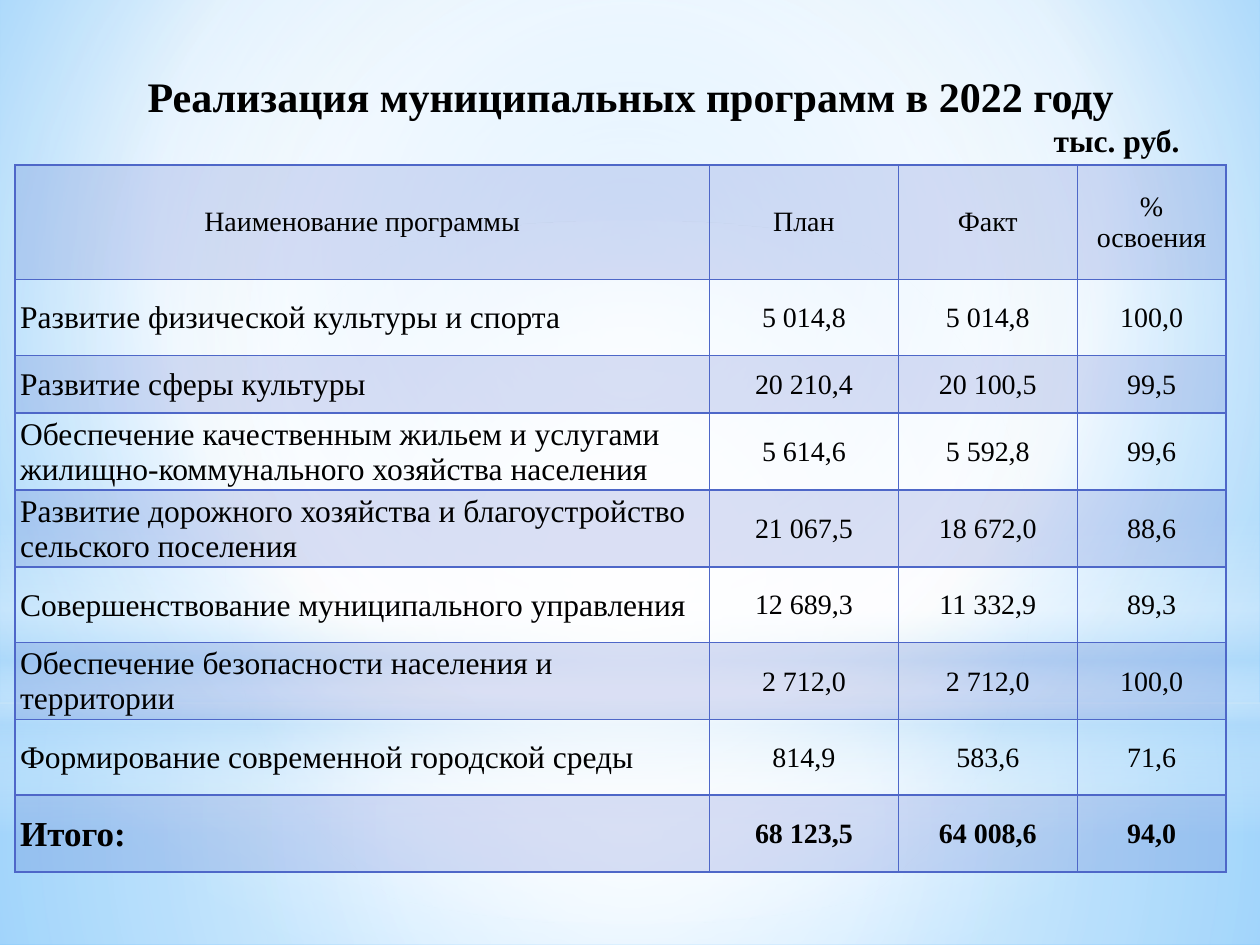
from dataclasses import dataclass
from typing import Optional

import lxml.etree
import pptx
import pptx.dml.color
import pptx.enum.shapes
import pptx.enum.text
import pptx.oxml.ns
import pptx.util

Inches = pptx.util.Inches
Align = pptx.enum.text.PP_ALIGN
Preset = pptx.enum.shapes.MSO_SHAPE
qn = pptx.oxml.ns.qn

FONT = "Times New Roman"
COLORS = {
    "text": "000000",
    "accent": "4E67C8",
    "white": "FFFFFF",
    "haze": "B4DCFA",
    "sky": "9ED5FF",
    "deep": "5BB9FF",
}


@dataclass(frozen=True)
class Stop:
    position: int
    color: str
    opacity: int = 100


@dataclass(frozen=True)
class Gradient:
    stops: tuple[Stop, ...]
    focus: tuple[int, int, int, int] = (50, 50, 50, 50)
    angle: Optional[int] = None


@dataclass(frozen=True)
class Layer:
    preset: int
    top: float
    height: float
    gradient: Gradient


@dataclass(frozen=True)
class Program:
    name: str
    plan: str
    actual: str
    percent: str
    height: float = 0.6


BACKGROUND = Gradient(
    (Stop(0, "sky"), Stop(60, "white"), Stop(100, "deep")), (20, 10, 20, 60))
LAYERS = [
    Layer(Preset.RECTANGLE, 5.58, 1.92, Gradient(
        (Stop(0, "white", 91), Stop(37, "white", 76), Stop(100, "haze", 79)))),
    Layer(Preset.RECTANGLE, 0, 5.58, Gradient(
        (Stop(0, "white", 89), Stop(48, "white", 62), Stop(100, "haze", 79)))),
    Layer(Preset.RECTANGLE, 4.12, 2.5, Gradient(
        (Stop(0, "white", 0), Stop(29, "white", 30), Stop(45, "haze", 40),
         Stop(55, "white", 26), Stop(65, "haze", 60), Stop(100, "white", 0)),
        angle=90)),
    Layer(Preset.OVAL, 1.75, 5.58, Gradient(
        (Stop(0, "white"), Stop(56, "white", 0)))),
]
COLUMN_WIDTHS = [5.51, 1.5, 1.42, 1.18]
ROWS = [
    Program("Наименование программы", "План", "Факт", "% освоения", 0.91),
    Program("Развитие физической культуры и спорта", "5 014,8", "5 014,8", "100,0"),
    Program("Развитие сферы культуры", "20 210,4", "20 100,5", "99,5", 0.46),
    Program("Обеспечение качественным жильем и услугами "
            "жилищно-коммунального хозяйства населения",
            "5 614,6", "5 592,8", "99,6", 0.56),
    Program("Развитие дорожного хозяйства и благоустройство сельского поселения",
            "21 067,5", "18 672,0", "88,6", 0.56),
    Program("Совершенствование муниципального управления",
            "12 689,3", "11 332,9", "89,3"),
    Program("Обеспечение безопасности населения и территории",
            "2 712,0", "2 712,0", "100,0"),
    Program("Формирование современной городской среды", "814,9", "583,6", "71,6"),
    Program("Итого:", "68 123,5", "64 008,6", "94,0", 0.61),
]


def add_node(parent, tag: str, **attributes):
    return lxml.etree.SubElement(
        parent, qn(tag), {key: str(value) for key, value in attributes.items()})


def add_color(parent, color: str, opacity: int = 100) -> None:
    node = add_node(parent, "a:srgbClr", val=COLORS[color])
    if opacity < 100:
        add_node(node, "a:alpha", val=opacity * 1000)


def set_gradient(owner, fill, gradient: Gradient) -> None:
    fill.gradient()
    node = owner._element.find(".//" + qn("a:gradFill"))
    for child in list(node):
        node.remove(child)
    stops = add_node(node, "a:gsLst")
    for stop in gradient.stops:
        add_color(add_node(stops, "a:gs", pos=stop.position * 1000),
                  stop.color, stop.opacity)
    if gradient.angle is not None:
        add_node(node, "a:lin", ang=gradient.angle * 60000, scaled=0)
    else:
        sides = dict(zip("ltrb", (value * 1000 for value in gradient.focus)))
        add_node(add_node(node, "a:path", path="circle"), "a:fillToRect", **sides)


def write(p, text: str, *, size: int, bold: bool = False,
          align: int = Align.LEFT) -> None:
    p.alignment = align
    r = p.add_run()
    r.text = text
    r.font.name = FONT
    r.font.size = pptx.util.Pt(size)
    r.font.bold = bold
    r.font.color.rgb = pptx.dml.color.RGBColor.from_string(COLORS["text"])


def add_layer(slide, layer: Layer) -> None:
    s = slide.shapes.add_shape(
        layer.preset, 0, Inches(layer.top), Inches(10), Inches(layer.height))
    s.shadow.inherit = False
    s.line.fill.background()
    set_gradient(s, s.fill, layer.gradient)


def add_title(slide) -> None:
    tf = slide.shapes.add_textbox(
        Inches(0.55), Inches(0.47), Inches(8.91), Inches(0.47)).text_frame
    tf.word_wrap = True
    tf.margin_top = Inches(0.09)
    write(tf.paragraphs[0], "Реализация муниципальных программ в 2022 году",
          size=24, bold=True, align=Align.CENTER)
    write(tf.add_paragraph(), "тыс. руб.", size=18, bold=True, align=Align.RIGHT)


def style_cell(cell, shaded: bool, margins: tuple[float, ...]) -> None:
    cell.vertical_anchor = pptx.enum.text.MSO_ANCHOR.MIDDLE
    (cell.margin_left, cell.margin_top,
     cell.margin_right, cell.margin_bottom) = map(Inches, margins)
    tc_pr = cell._tc.get_or_add_tcPr()
    for side in ("a:lnL", "a:lnR", "a:lnT", "a:lnB"):
        line = add_node(tc_pr, side, w=pptx.util.Pt(1))
        add_color(add_node(line, "a:solidFill"), "accent")
    if shaded:
        add_color(add_node(tc_pr, "a:solidFill"), "accent", 20)
    else:
        add_node(tc_pr, "a:noFill")


def add_program_table(slide) -> None:
    table = slide.shapes.add_table(
        len(ROWS), len(COLUMN_WIDTHS), Inches(0.12), Inches(1.31),
        Inches(sum(COLUMN_WIDTHS)), Inches(sum(row.height for row in ROWS))).table
    table.first_row = table.horz_banding = False
    for column, width in zip(table.columns, COLUMN_WIDTHS):
        column.width = Inches(width)
    for i, row in enumerate(ROWS):
        table.rows[i].height = Inches(row.height)
        header, total = i == 0, i == len(ROWS) - 1
        for j, text in enumerate((row.name, row.plan, row.actual, row.percent)):
            cell = table.cell(i, j)
            label = j == 0 and not header
            margins = ((0.1, 0.05, 0.1, 0.05) if header
                       else (0.04 if label else 0.01, 0.01, 0.01, 0))
            style_cell(cell, i % 2 == 0, margins)
            size = (20 if total else 18) if label else 16
            write(cell.text_frame.paragraphs[0], text, size=size, bold=total,
                  align=Align.LEFT if label else Align.CENTER)


def main() -> None:
    prs = pptx.Presentation()
    prs.slide_width, prs.slide_height = Inches(10), Inches(7.5)
    slide = prs.slides.add_slide(prs.slide_layouts[6])
    set_gradient(slide, slide.background.fill, BACKGROUND)
    for layer in LAYERS:
        add_layer(slide, layer)
    add_title(slide)
    add_program_table(slide)
    prs.save("out.pptx")


if __name__ == "__main__":
    main()
